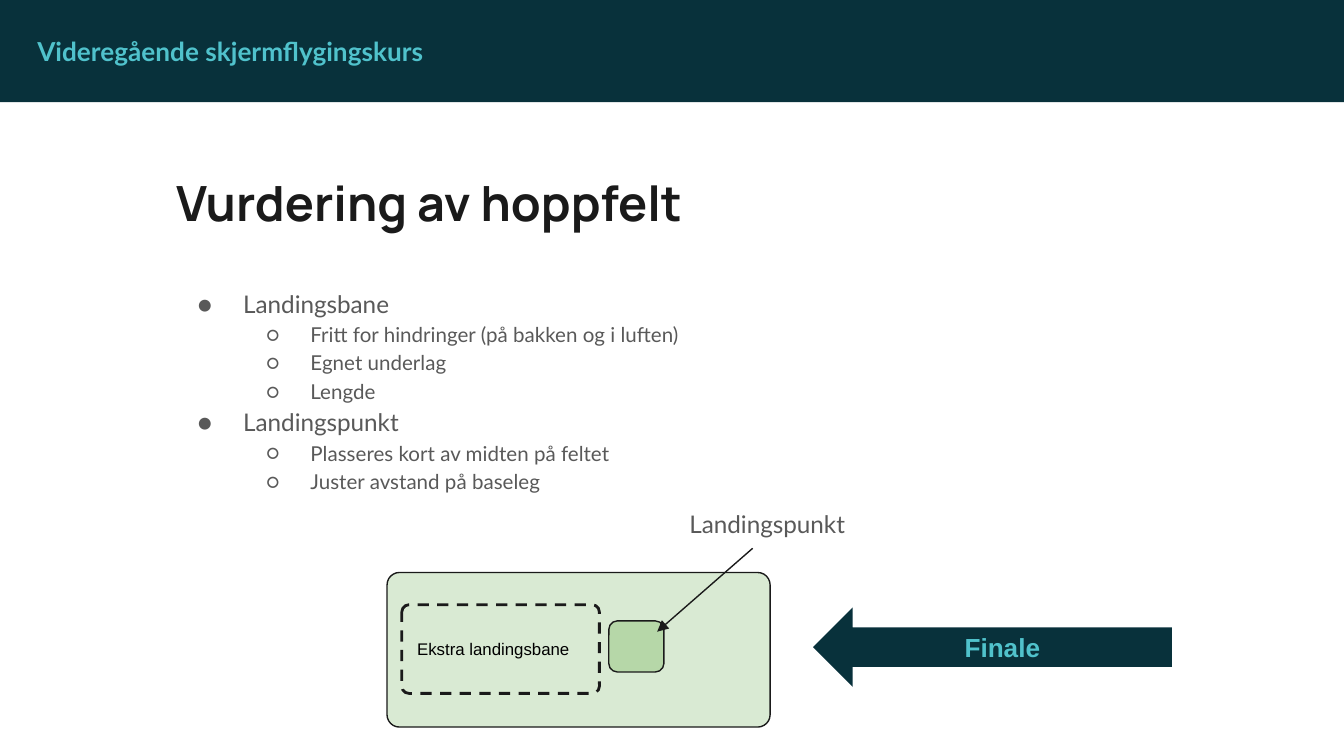
from lxml.etree import SubElement
from pptx import Presentation
from pptx.dml.color import RGBColor
from pptx.enum.dml import MSO_LINE
from pptx.enum.shapes import MSO_CONNECTOR, MSO_SHAPE as SHAPE
from pptx.enum.text import MSO_ANCHOR as ANCHOR, MSO_AUTO_SIZE, PP_ALIGN as ALIGN
from pptx.oxml.ns import qn
from pptx.util import Inches, Pt

NAVY, TEAL, INK, GREY = "08313B", "50C2CC", "1A1A1A", "595959"
FIELD_GREEN, SPOT_GREEN = "D9EAD3", "B6D7A8"
CRITERIA = [
    ("Landingsbane", ["Fritt for hindringer (på bakken og i luften)",
                      "Egnet underlag", "Lengde"]),
    ("Landingspunkt", ["Plasseres kort av midten på feltet",
                       "Juster avstand på baseleg"]),
]


def rgb(color):
    return RGBColor.from_string(color)


def place(shape, box):
    shape.left, shape.top, shape.width, shape.height = map(Inches, box)


def prepare_frame(shape, anchor=ANCHOR.TOP):
    frame = shape.text_frame
    frame.word_wrap = True
    frame.auto_size = MSO_AUTO_SIZE.NONE
    frame.vertical_anchor = anchor
    frame.margin_left = frame.margin_right = Inches(0.1)
    frame.margin_top = frame.margin_bottom = Inches(0.1)
    return frame


def add_run(paragraph, text, size, color, font="Lato", bold=False):
    run = paragraph.add_run()
    run.text = text
    run.font.size, run.font.name, run.font.bold = Pt(size), font, bold
    run.font.color.rgb = rgb(color)


def set_bullet(paragraph, char=None, margin=0, indent=0):
    """Set the bullet and hanging indent; without a char, remove the bullet."""
    props = paragraph._p.get_or_add_pPr()
    props.set("marL", str(Inches(margin)))
    props.set("indent", str(Inches(indent)))
    if char is None:
        SubElement(props, qn("a:buNone"))
        return
    bullet_color = SubElement(props, qn("a:buClr"))
    SubElement(bullet_color, qn("a:srgbClr"), val=GREY)
    SubElement(props, qn("a:buFont"), typeface="Lato")
    SubElement(props, qn("a:buChar"), char=char)


def add_block(slide, kind, box, fill=None, line=None, width=0.75):
    block = slide.shapes.add_shape(kind, *map(Inches, box))
    block.shadow.inherit = False
    if fill:
        block.fill.solid()
        block.fill.fore_color.rgb = rgb(fill)
    else:
        block.fill.background()
    if line:
        block.line.color.rgb = rgb(line)
        block.line.width = Pt(width)
    else:
        block.line.fill.background()
    return block


def add_header(slide, box):
    left, top, _, _ = box
    add_block(slide, SHAPE.RECTANGLE, box, NAVY)
    course = slide.shapes.add_textbox(
        *map(Inches, (left + 0.18, top + 0.16, 3.26, 0.44)))
    add_run(prepare_frame(course).paragraphs[0],
            "Videregående skjermflygingskurs", 14, TEAL, bold=True)


def fill_title(title, box):
    place(title, box)
    paragraph = prepare_frame(title).paragraphs[0]
    paragraph.alignment = ALIGN.LEFT
    add_run(paragraph, "Vurdering av hoppfelt", 26, INK, "Manrope", True)


def fill_criteria(body, box):
    place(body, box)
    frame = prepare_frame(body)
    lines = []
    for heading, points in CRITERIA:
        lines.append((heading, 0))
        lines += [(point, 1) for point in points]
    for i, (text, level) in enumerate(lines):
        paragraph = frame.add_paragraph() if i else frame.paragraphs[0]
        paragraph.level = level
        paragraph.line_spacing = 1.15
        paragraph.space_before = Pt(0)
        set_bullet(paragraph, "●○"[level], 0.5 * (level + 1),
                   (-0.34, -0.33)[level])
        add_run(paragraph, text, (13, 11)[level], GREY)


def add_field(slide, box):
    """Draw the landing field with its spare runway and landing point."""
    left, top, _, _ = box
    field = add_block(slide, SHAPE.ROUNDED_RECTANGLE, box, FIELD_GREEN, INK)
    add_block(slide, SHAPE.FLOWCHART_ALTERNATE_PROCESS,
              (left + 1.65, top + 0.36, 0.41, 0.38), SPOT_GREEN, INK)
    runway = add_block(slide, SHAPE.ROUNDED_RECTANGLE,
                       (left + 0.11, top + 0.24, 1.47, 0.66),
                       line=INK, width=1.5)
    runway.line.dash_style = MSO_LINE.DASH
    field.adjustments[0] = runway.adjustments[0] = 0.08
    paragraph = prepare_frame(runway, ANCHOR.MIDDLE).paragraphs[0]
    paragraph.alignment = ALIGN.LEFT
    add_run(paragraph, "Ekstra landingsbane", 9, "000000", "Arial")


def add_callout(slide, label, box):
    """Fill the landing point label and draw its arrow to the field."""
    left, top, _, _ = box
    place(label, box)
    paragraph = prepare_frame(label).paragraphs[0]
    paragraph.line_spacing = 1.15
    paragraph.space_before, paragraph.space_after = Pt(0), Pt(16)
    set_bullet(paragraph)
    add_run(paragraph, "Landingspunkt", 13, GREY)

    ends = (left + 0.57, top + 0.42, left - 0.14, top + 1.04)
    pointer = slide.shapes.add_connector(
        MSO_CONNECTOR.STRAIGHT, *map(Inches, ends))
    pointer.line.color.rgb = rgb(INK)
    pointer.line.width = Pt(0.75)
    SubElement(pointer.line._get_or_add_ln(), qn("a:tailEnd"), type="triangle")
    SubElement(pointer._element.spPr, qn("a:effectLst"))


def add_final_approach(slide, box):
    arrow = add_block(slide, SHAPE.LEFT_ARROW, box, NAVY)
    paragraph = prepare_frame(arrow, ANCHOR.MIDDLE).paragraphs[0]
    paragraph.alignment = ALIGN.CENTER
    add_run(paragraph, "Finale", 14, TEAL, "Arial", True)


def main():
    deck = Presentation()
    deck.slide_width = Inches(10)
    deck.slide_height = deck.slide_width * 9 // 16
    two_content = deck.slide_layouts[3]
    slide = deck.slides.add_slide(two_content)
    title, criteria, point_label = list(slide.placeholders)[:3]

    add_header(slide, (0, 0, 10, 0.76))
    fill_title(title, (1.21, 1.19, 8.41, 0.59))
    fill_criteria(criteria, (1.21, 2.02, 8.41, 3.3))
    add_field(slide, (2.88, 4.26, 2.85, 1.15))
    add_callout(slide, point_label, (5.03, 3.66, 1.71, 0.68))
    add_final_approach(slide, (6.05, 4.52, 2.67, 0.59))
    deck.save("out.pptx")


if __name__ == "__main__":
    main()
